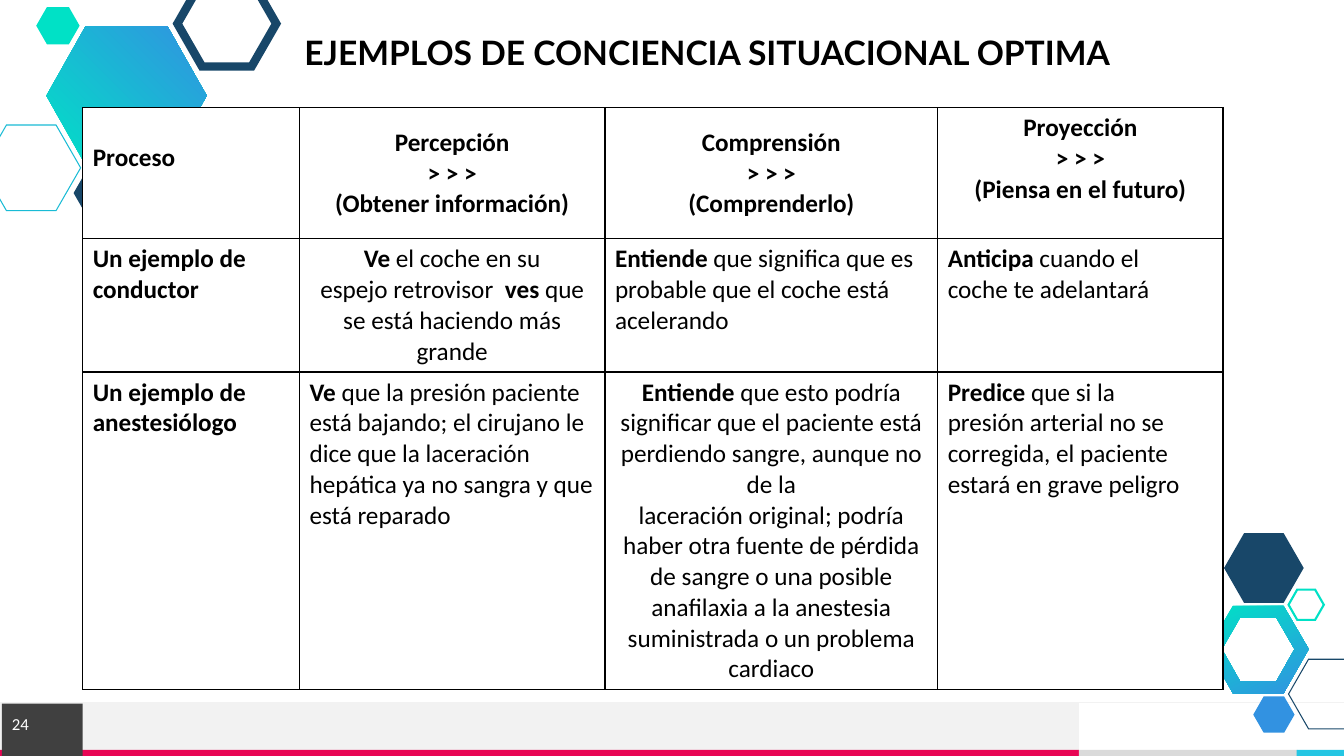
from pptx import Presentation
from pptx.dml.color import RGBColor
from pptx.enum.shapes import MSO_CONNECTOR as Link, MSO_SHAPE as Form
from pptx.enum.text import MSO_ANCHOR as Anchor, MSO_AUTO_SIZE as Fit, PP_ALIGN as Align
from pptx.oxml.ns import qn
from pptx.util import Pt
from lxml.etree import SubElement as Sub

PX = 9144
BLACK = RGBColor(0x00, 0x00, 0x00)
WHITE = RGBColor(0xFF, 0xFF, 0xFF)
DARK = RGBColor(0x40, 0x40, 0x40)
PALE = RGBColor(0xF2, 0xF2, 0xF2)
GREY = RGBColor(0xDA, 0xDA, 0xDA)
PINK = RGBColor(0xE8, 0x05, 0x54)
CYAN = RGBColor(0x25, 0xC6, 0xE3)
NAVY = RGBColor(0x18, 0x47, 0x69)
MINT = RGBColor(0x00, 0xE1, 0xC6)
TEAL = RGBColor(0x19, 0xBB, 0xD5)
BLUE = RGBColor(0x32, 0x92, 0xE1)

HEAD = {"name": "Lato", "size": Pt(24), "bold": True}
BODY = {"name": "Calibri", "size": Pt(18)}
PAGE = {"name": "Calibri", "size": Pt(12)}
SIDES = ("margin_left", "margin_top", "margin_right", "margin_bottom")

COLS = (215, 303, 330, 283)
ROWS = (130, 130, 310)
L, C = Align.LEFT, Align.CENTER
CELLS = (
    (
        (L, "*Proceso*"),
        (C, "*Percepción*", "*> > >*", "*(Obtener información)*"),
        (C, "*Comprensión*", "*> > >*", "*(Comprenderlo)*"),
        (C, "*Proyección*", "*> > >*", "*(Piensa en el futuro)*"),
    ),
    (
        (L, "*Un ejemplo de conductor*"),
        (C, "*Ve* el coche en su",
         "espejo retrovisor  *ves* que se está haciendo más grande"),
        (L, "*Entiende* que significa que es probable que el coche está acelerando"),
        (L, "*Anticipa *cuando el", "coche te adelantará"),
    ),
    (
        (L, "*Un ejemplo de anestesiólogo*"),
        (L, "*Ve* que la presión paciente está bajando; el cirujano le dice que "
            "la laceración hepática ya no sangra y que está reparado"),
        (C, "*Entiende *que esto podría significar que el paciente está "
            "perdiendo sangre, aunque no de la",
         "laceración original; podría haber otra fuente de pérdida de sangre o "
         "una posible anafilaxia a la anestesia suministrada o un problema cardiaco"),
        (L, "*Predice* que si la", "presión arterial no se",
         "corregida, el paciente", "estará en grave peligro"),
    ),
)


def px(*nums):
    return [n * PX for n in nums]


def style(font, look, color):
    for key, val in look.items():
        setattr(font, key, val)
    font.color.rgb = color


def inset(frame, *nums):
    for side, val in zip(SIDES, px(*nums)):
        setattr(frame, side, val)


def paint(shape, fill=None, line=None, width=1):
    shape.shadow.inherit = False
    if fill is None:
        shape.fill.background()
    else:
        shape.fill.solid()
        shape.fill.fore_color.rgb = fill
    if line is None:
        shape.line.fill.background()
    else:
        shape.line.color.rgb = line
        shape.line.width = Pt(width)
    return shape


def bar(slide, box, fill):
    return paint(slide.shapes.add_shape(Form.RECTANGLE, *px(*box)), fill)


def hexa(slide, box, fill=None, line=None, width=1):
    shape = slide.shapes.add_shape(Form.HEXAGON, *px(*box))
    shape.adjustments[0] = 0.287
    paint(shape, fill, line, width)
    if line is not None:
        Sub(shape.line._get_or_add_ln(), qn("a:miter"), lim="800000")


def ring(x, y, w, h):
    q = w // 4
    return [(x, y + h // 2), (x + q, y), (x + w - q, y),
            (x + w, y + h // 2), (x + w - q, y + h), (x + q, y + h)]


def blend(slide, box, angle, hole=0):
    x, y, w, h = box
    first, *rest = ring(*box)
    path = slide.shapes.build_freeform(*first, scale=PX)
    path.add_line_segments(rest, close=True)
    if hole:
        inner = ring(x + hole, y + hole - 2, w - 2 * hole, h - 2 * hole + 4)[::-1]
        path.move_to(*inner[0])
        path.add_line_segments(inner[1:], close=True)
    shape = paint(path.convert_to_shape(), BLUE)
    shape.fill.gradient()
    shape.fill.gradient_angle = angle
    for stop, color in zip(shape.fill.gradient_stops, (MINT, BLUE)):
        stop.color.rgb = color


def top_art(slide, x, y):
    blend(slide, (x + 46, y + 26, 159, 138), 45)
    hexa(slide, (x - 18, y + 124, 98, 85), line=TEAL, width=0.75)
    hexa(slide, (x + 73, y + 169, 51, 45), NAVY)
    hexa(slide, (x + 176, y - 19, 98, 85), line=NAVY, width=6)
    hexa(slide, (x + 36, y + 7, 43, 37), MINT)


def low_art(slide, x, y):
    blend(slide, (x, y + 72, 100, 87), 296, 14)
    hexa(slide, (x + 80, y + 125, 79, 69), line=NAVY, width=0.75)
    hexa(slide, (x + 45, y + 162, 41, 36), BLUE)
    hexa(slide, (x + 16, y, 79, 69), NAVY)
    hexa(slide, (x + 80, y + 56, 35, 30), line=MINT, width=1.5)


def footer(slide, x, y, w, h):
    base = y + h - 6
    bar(slide, (x, y, 1070, h - 6), PALE)
    for left, wide, color in ((0, 1070, PINK), (1070, 217, GREY), (1286, 47, CYAN)):
        bar(slide, (x + left, base, wide, 6), color)
    rule = slide.shapes.add_connector(Link.STRAIGHT, *px(x + w, y, x, y))
    rule.line.color.rgb = PALE
    rule.line.width = Pt(0.5)
    Sub(rule.element.spPr, qn("a:effectLst"))


def number(slide, box):
    frame = bar(slide, box, DARK).text_frame
    frame.vertical_anchor = Anchor.TOP
    inset(frame, 10, 10, 10, 10)
    para = frame.paragraphs[0]
    para.alignment = L
    run = para.add_run()
    run.text = "24"
    style(run.font, PAGE, WHITE)


def title(slide, box):
    frame = slide.shapes.add_textbox(*px(*box)).text_frame
    frame.word_wrap = True
    frame.auto_size = Fit.SHAPE_TO_FIT_TEXT
    run = frame.paragraphs[0].add_run()
    run.text = "EJEMPLOS DE CONCIENCIA SITUACIONAL OPTIMA"
    style(run.font, HEAD, BLACK)


def edge(cell):
    props = cell._tc.get_or_add_tcPr()
    for spot, side in enumerate(("lnL", "lnR", "lnT", "lnB")):
        line = props.makeelement(qn("a:" + side), {"w": str(Pt(1))})
        Sub(Sub(line, qn("a:solidFill")), qn("a:srgbClr"), val=str(BLACK))
        props.insert(spot, line)


def write(cell, align, *lines):
    cell.fill.solid()
    cell.fill.fore_color.rgb = WHITE
    edge(cell)
    frame = cell.text_frame
    for i, line in enumerate(lines):
        para = frame.add_paragraph() if i else frame.paragraphs[0]
        para.alignment = align
        for j, part in enumerate(line.split("*")):
            if part:
                run = para.add_run()
                run.text = part
                style(run.font, {**BODY, "bold": j % 2 == 1}, BLACK)


def grid(slide, x, y):
    box = px(x, y, sum(COLS), sum(ROWS))
    table = slide.shapes.add_table(len(ROWS), len(COLS), *box).table
    table.first_row = table.horz_banding = False
    for col, wide in zip(table.columns, px(*COLS)):
        col.width = wide
    for row, high, texts in zip(table.rows, px(*ROWS), CELLS):
        row.height = high
        for cell, text in zip(row.cells, texts):
            write(cell, *text)
    for i in range(3):
        table.cell(0, i).vertical_anchor = Anchor.MIDDLE
    table.cell(0, 0).margin_bottom = 36 * PX


def main():
    deck = Presentation()
    deck.slide_width, deck.slide_height = px(1333, 750)
    slide = deck.slides.add_slide(deck.slide_layouts[6])
    footer(slide, 0, 697, 1333, 53)
    top_art(slide, 0, 0)
    low_art(slide, 1198, 529)
    number(slide, (2, 698, 80, 52))
    grid(slide, 82, 107)
    title(slide, (292, 27, 894, 50))
    deck.save("out.pptx")


if __name__ == "__main__":
    main()
